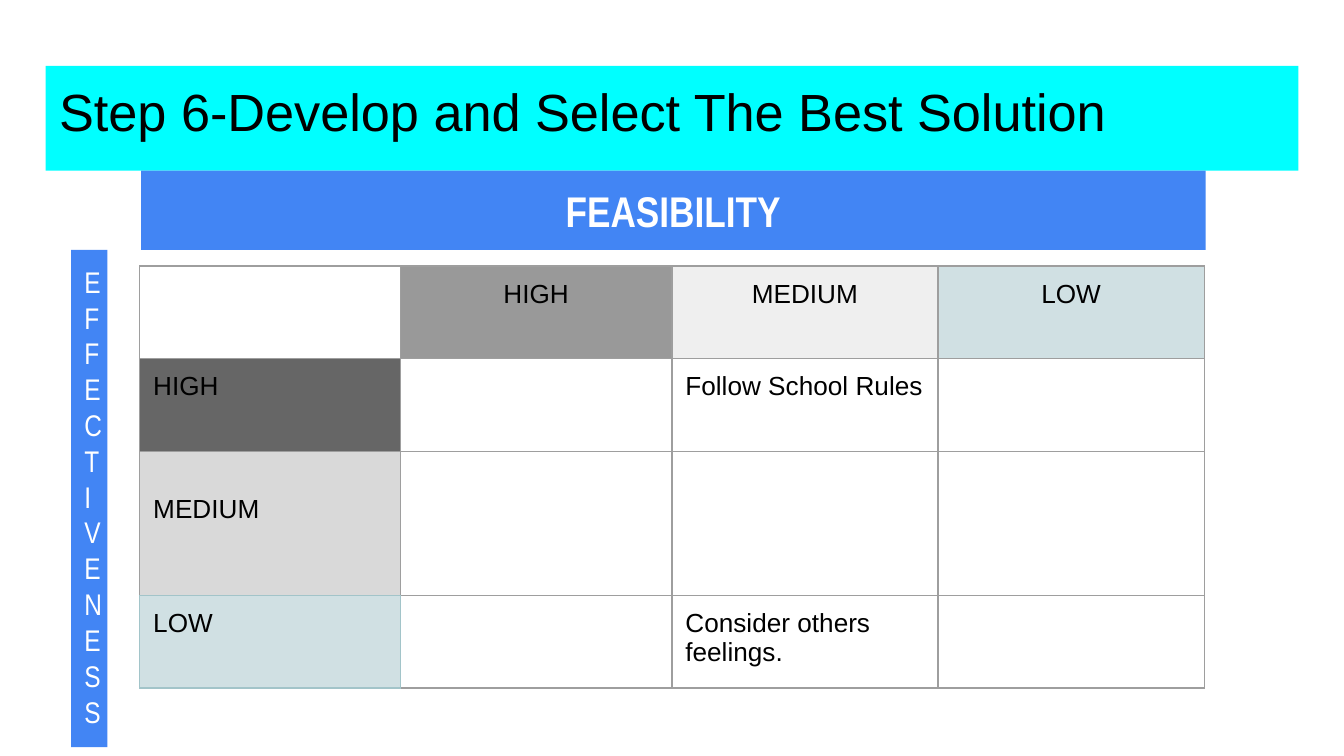
"""Build the slide that ranks solutions by feasibility and effectiveness."""
from lxml.etree import SubElement
from pptx import Presentation
from pptx.dml.color import RGBColor
from pptx.enum.shapes import MSO_SHAPE
from pptx.enum.text import MSO_ANCHOR, MSO_AUTO_SIZE, PP_ALIGN
from pptx.oxml.ns import qn
from pptx.util import Inches, Pt

BLACK = RGBColor(0, 0, 0)
WHITE = RGBColor(255, 255, 255)
CYAN = RGBColor(0, 255, 255)
BLUE = RGBColor(0x42, 0x85, 0xF4)
DARK = RGBColor(0x66, 0x66, 0x66)
GRAY = RGBColor(0x99, 0x99, 0x99)
SILVER = RGBColor(0xD9, 0xD9, 0xD9)
PALE = RGBColor(0xEF, 0xEF, 0xEF)
ICE = RGBColor(0xD0, 0xE0, 0xE3)
EDGE = RGBColor(0x9E, 0x9E, 0x9E)
TEAL = RGBColor(0xA2, 0xC4, 0xC9)

COLS = [1.94, 2.02, 1.98, 1.98]
ROWS = [0.69, 0.69, 1.07, 0.69]
TEXTS = [
    ["", "HIGH", "MEDIUM", "LOW"],
    ["HIGH", "", "Follow School Rules", ""],
    ["MEDIUM", "", "", ""],
    ["LOW", "", "Consider others feelings.", ""],
]
FILLS = {
    (0, 1): GRAY, (0, 2): PALE, (0, 3): ICE,
    (1, 0): DARK, (2, 0): SILVER, (3, 0): ICE,
}
TINTS = {(2, 0): "B", (3, 0): "LRTB", (3, 1): "L"}


def put(frame, text, size=14, font="Arial", color=BLACK, bold=False,
        align=PP_ALIGN.LEFT):
    """Write formatted text into the first paragraph of a frame."""
    para = frame.paragraphs[0]
    para.text = text
    para.alignment = align
    para.font.size = Pt(size)
    para.font.name = font
    para.font.bold = bold
    para.font.color.rgb = color


class Deck:
    """Hold the style and the current slide."""

    pad = Inches(0.1)
    line = Pt(0.75)

    def __init__(self, show):
        """Add a slide with a title only."""
        self.slide = show.slides.add_slide(show.slide_layouts[5])

    def fit(self, shape, fill, text, **form):
        """Fill a shape and set its text from the top."""
        shape.fill.solid()
        shape.fill.fore_color.rgb = fill
        shape.line.fill.background()
        frame = shape.text_frame
        frame.word_wrap = True
        frame.auto_size = MSO_AUTO_SIZE.NONE
        frame.vertical_anchor = MSO_ANCHOR.TOP
        frame.margin_left = frame.margin_right = self.pad
        frame.margin_top = frame.margin_bottom = self.pad
        put(frame, text, **form)

    def title(self, box, fill, text, **form):
        """Place the title on a coloured band."""
        shape = self.slide.shapes.title
        shape.left, shape.top, shape.width, shape.height = map(Inches, box)
        self.fit(shape, fill, text, **form)

    def bar(self, box, fill, text, **form):
        """Add a rectangle that names an axis."""
        shape = self.slide.shapes.add_shape(
            MSO_SHAPE.RECTANGLE, *map(Inches, box))
        shape.shadow.inherit = False
        self.fit(shape, fill, text, **form)

    def cell(self, cell, text, fill, tint, align):
        """Write one table cell with its fill and borders."""
        cell.margin_left = cell.margin_right = self.pad
        cell.margin_top = cell.margin_bottom = self.pad
        put(cell.text_frame, text, align=align)
        props = cell._tc.get_or_add_tcPr()
        for side in "LRTB":
            edge = SubElement(props, qn(f"a:ln{side}"), w=str(self.line))
            solid = SubElement(edge, qn("a:solidFill"))
            color = TEAL if side in tint else EDGE
            SubElement(solid, qn("a:srgbClr"), val=str(color))
        if fill is None:
            cell.fill.background()
        else:
            cell.fill.solid()
            cell.fill.fore_color.rgb = fill

    def grid(self, left, top):
        """Add the table of ranked solutions."""
        box = map(Inches, (left, top, sum(COLS), sum(ROWS)))
        table = self.slide.shapes.add_table(len(ROWS), len(COLS), *box).table
        table.first_row = table.horz_banding = False
        for col, width in zip(table.columns, COLS):
            col.width = Inches(width)
        for r, height in enumerate(ROWS):
            table.rows[r].height = Inches(height)
            align = PP_ALIGN.LEFT if r else PP_ALIGN.CENTER
            for c, text in enumerate(TEXTS[r]):
                self.cell(table.cell(r, c), text, FILLS.get((r, c)),
                          TINTS.get((r, c), ""), align)
        table.cell(2, 0).margin_top = Inches(0.32)


def main():
    """Build and save the slide."""
    show = Presentation()
    show.slide_width = Inches(10)
    show.slide_height = show.slide_width * 9 // 16
    deck = Deck(show)
    deck.title((0.34, 0.49, 9.32, 0.78), CYAN,
               "Step 6-Develop and Select The Best Solution", size=28)
    deck.grid(1.04, 1.98)
    deck.bar((1.05, 1.27, 7.92, 0.59), BLUE, "FEASIBILITY", size=23,
             font="Arial Narrow", color=WHITE, bold=True,
             align=PP_ALIGN.CENTER)
    deck.bar((0.53, 1.86, 0.27, 3.7), BLUE, "EFFECTIVENESS", size=16,
             font="Arial Narrow", color=WHITE)
    show.save("out.pptx")


if __name__ == "__main__":
    main()
